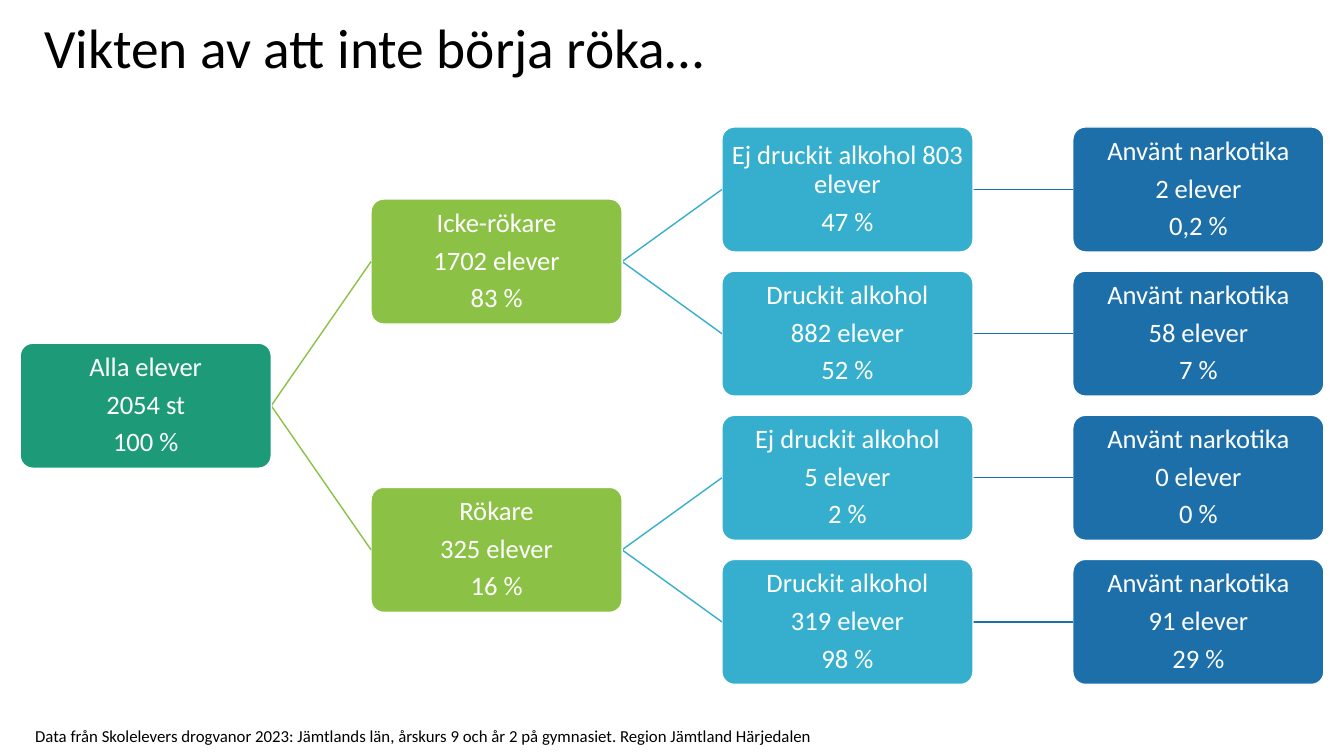
from lxml.etree import SubElement
from pptx import Presentation
from pptx.dml.color import RGBColor
from pptx.enum.shapes import MSO_CONNECTOR as Connector, MSO_SHAPE as Shape
from pptx.enum.text import MSO_ANCHOR as Anchor, PP_ALIGN as Align
from pptx.oxml.ns import qn
from pptx.util import Inches, Pt

TITLE = "Vikten av att inte börja röka…"
SOURCE = ("Data från Skolelevers drogvanor 2023: Jämtlands län, årskurs 9 och år 2 "
          "på gymnasiet. Region Jämtland Härjedalen")
TREE = ("Alla elever\n2054 st\n100 %", [
    ("Icke-rökare\n1702 elever\n83 %", [
        ("Ej druckit alkohol 803 elever\n47 %", [("Använt narkotika\n2 elever\n0,2 %", [])]),
        ("Druckit alkohol\n882 elever\n52 %", [("Använt narkotika\n58 elever\n7 %", [])]),
    ]),
    ("Rökare\n325 elever\n16 %", [
        ("Ej druckit alkohol\n5 elever\n2 %", [("Använt narkotika\n0 elever\n0 %", [])]),
        ("Druckit alkohol\n319 elever\n98 %", [("Använt narkotika\n91 elever\n29 %", [])]),
    ]),
])
COLORS = {"all": "1D9A78", "smoking": "8BC145", "alcohol": "36AFCE",
          "drugs": "1D6FA9", "white": "FFFFFF", "black": "000000"}
LEVELS = ["all", "smoking", "alcohol", "drugs"]
FONT = "Calibri"
BOX_WIDTH, BOX_HEIGHT = 2.49, 1.24
LEFT, COLUMN_STEP = 0.2, 3.48
FIRST_CENTER, ROW_STEP = 1.88, 1.43


def color(name):
    return RGBColor.from_string(COLORS[name])


def style_text(frame, size, ink):
    frame.word_wrap = True
    for para in frame.paragraphs:
        for span in para.runs:
            span.font.name = FONT
            span.font.size = Pt(size)
            span.font.color.rgb = color(ink)


def add_label(page, text, left, top, width, height, size, anchor):
    box = page.shapes.add_textbox(Inches(left), Inches(top), Inches(width), Inches(height))
    frame = box.text_frame
    frame.text = text
    frame.vertical_anchor = anchor
    style_text(frame, size, "black")
    return frame


def add_box(page, text, level, center):
    box = page.shapes.add_shape(
        Shape.ROUNDED_RECTANGLE, Inches(LEFT + level * COLUMN_STEP),
        Inches(center - BOX_HEIGHT / 2), Inches(BOX_WIDTH), Inches(BOX_HEIGHT))
    box.adjustments[0] = 0.1
    box.shadow.inherit = False
    box.fill.solid()
    box.fill.fore_color.rgb = color(LEVELS[level])
    box.line.color.rgb = color("white")
    box.line.width = Pt(1)
    frame = box.text_frame
    frame.text = text
    frame.vertical_anchor = Anchor.MIDDLE
    frame.margin_left = frame.margin_right = Inches(0.01)
    frame.margin_top = frame.margin_bottom = Inches(0.01)
    for para in frame.paragraphs:
        para.alignment = Align.CENTER
        para.line_spacing = 0.9
        para.space_after = Pt(6.3)
    style_text(frame, 19, "white")


def add_branch(page, level, start, end):
    right = LEFT + level * COLUMN_STEP
    line = page.shapes.add_connector(
        Connector.STRAIGHT, Inches(right - COLUMN_STEP + BOX_WIDTH), Inches(start),
        Inches(right), Inches(end))
    line.line.color.rgb = color(LEVELS[level])
    line.line.width = Pt(1)
    SubElement(line._element.spPr, qn("a:effectLst"))


def draw_tree(page, node, level, rows):
    text, children = node
    ends = [draw_tree(page, child, level + 1, rows) for child in children]
    center = sum(ends) / len(ends) if ends else FIRST_CENTER + next(rows) * ROW_STEP
    for end in ends:
        add_branch(page, level + 1, center, end)
    add_box(page, text, level, center)
    return center


def main():
    deck = Presentation()
    deck.slide_width, deck.slide_height = Inches(13.33), Inches(7.5)
    page = deck.slides.add_slide(deck.slide_layouts[6])
    title = add_label(page, TITLE, 0.34, 0.15, 11.44, 0.71, 39.6, Anchor.MIDDLE)
    title.paragraphs[0].line_spacing = 0.9
    draw_tree(page, TREE, 0, iter(range(4)))
    add_label(page, SOURCE, 0.25, 7.15, 9.34, 0.3, 12, Anchor.TOP)
    deck.save("out.pptx")


if __name__ == "__main__":
    main()
